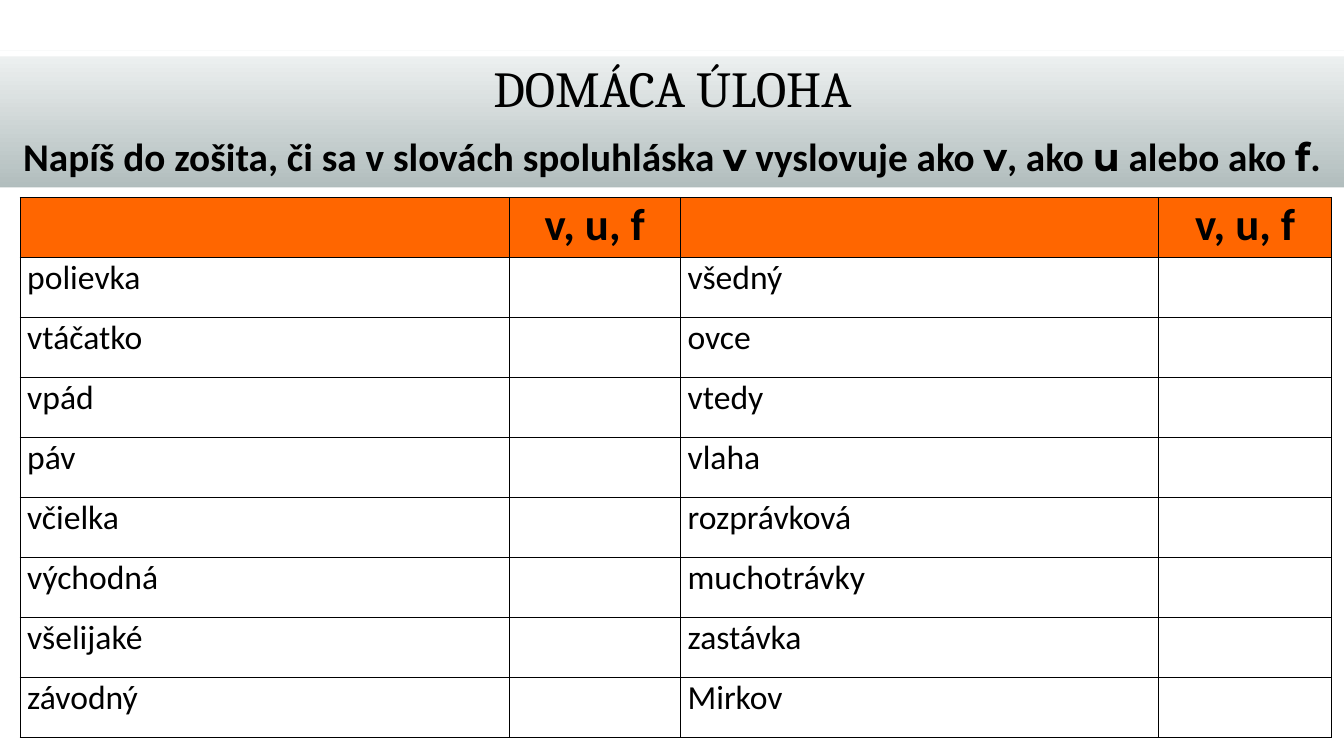
from lxml.etree import SubElement
from pptx import Presentation
from pptx.dml.color import RGBColor
from pptx.enum.shapes import MSO_SHAPE
from pptx.enum.text import MSO_ANCHOR, PP_ALIGN
from pptx.oxml.ns import qn
from pptx.util import Inches, Pt

BLACK = RGBColor(0x00, 0x00, 0x00)
WHITE = RGBColor(0xFF, 0xFF, 0xFF)
ORANGE = RGBColor(0xFF, 0x66, 0x00)
BAND_TOP = RGBColor(0xEF, 0xF2, 0xF2)
BAND_BOTTOM = RGBColor(0xB0, 0xBC, 0xBC)

# Content
TITLE = "DOMÁCA ÚLOHA"
TASK = [
    ("Napíš do zošita, či sa v slovách spoluhláska ", "Calibri"),
    ("v", "Montserrat"),
    (" vyslovuje ako ", "Calibri"),
    ("v", "Montserrat"),
    (", ako ", "Calibri"),
    ("u", "Montserrat"),
    (" alebo ako ", "Calibri"),
    ("f", "Montserrat"),
    (".", "Calibri"),
]
HEADER = ("", "v, u, f", "", "v, u, f")
WORD_PAIRS = [
    ("polievka", "všedný"),
    ("vtáčatko", "ovce"),
    ("vpád", "vtedy"),
    ("páv", "vlaha"),
    ("včielka", "rozprávková"),
    ("východná", "muchotrávky"),
    ("všelijaké", "zastávka"),
    ("závodný", "Mirkov"),
]
COLUMN_WIDTHS = (4.85, 1.7, 4.74, 1.72)
TABLE_HEIGHT = 5.36
SLIDE_WIDTH = 13.33


def add_strip(slide, top, height):
    """Add a full-width rectangle without outline."""
    shape = slide.shapes.add_shape(
        MSO_SHAPE.RECTANGLE, 0, Inches(top), Inches(SLIDE_WIDTH), Inches(height))
    shape.shadow.inherit = False
    shape.line.fill.background()
    return shape


def set_borders(cell):
    """Draw a thin black line on every side of a cell, ahead of its fill."""
    properties = cell._tc.get_or_add_tcPr()
    for position, side in enumerate(("lnL", "lnR", "lnT", "lnB")):
        line = SubElement(properties, qn(f"a:{side}"), w=str(Pt(1)))
        fill = SubElement(line, qn("a:solidFill"))
        SubElement(fill, qn("a:srgbClr"), val=str(BLACK))
        properties.insert(position, line)


def main():
    presentation = Presentation()
    presentation.slide_width = Inches(SLIDE_WIDTH)
    presentation.slide_height = Inches(7.5)
    slide = presentation.slides.add_slide(presentation.slide_layouts[5])

    # Gradient band with white edges
    band = add_strip(slide, 0.5, 1.39)
    band.fill.gradient()
    band.fill.gradient_angle = 270
    for stop, color in zip(band.fill.gradient_stops, (BAND_TOP, BAND_BOTTOM)):
        stop.color.rgb = color
    for top in (1.86, 0.5):
        edge = add_strip(slide, top, 0.06)
        edge.fill.solid()
        edge.fill.fore_color.rgb = WHITE

    # Title, brought in front of the band
    title = slide.shapes.title
    edge._element.addnext(title._element)
    title.left, title.top = Inches(1.17), Inches(0.52)
    title.width, title.height = Inches(11), Inches(1.22)
    title.text_frame.text = TITLE
    title.text_frame.vertical_anchor = MSO_ANCHOR.TOP
    title.text_frame.margin_top = Inches(0.11)
    paragraph = title.text_frame.paragraphs[0]
    paragraph.alignment = PP_ALIGN.CENTER
    paragraph.line_spacing = 0.9
    paragraph.font.name = "Cambria"
    paragraph.font.size = Pt(36)
    paragraph.font.color.rgb = BLACK

    # Task sentence
    task = slide.shapes.add_textbox(0, Inches(1.26), Inches(SLIDE_WIDTH), Inches(0.57))
    task.text_frame.word_wrap = True
    task.text_frame.vertical_anchor = MSO_ANCHOR.MIDDLE
    paragraph = task.text_frame.paragraphs[0]
    paragraph.alignment = PP_ALIGN.CENTER
    paragraph.font.size = Pt(28)
    paragraph.font.bold = True
    paragraph.font.color.rgb = BLACK
    for text, font_name in TASK:
        run = paragraph.add_run()
        run.text = text
        run.font.name = font_name

    # Word table
    rows = [HEADER] + [(left, "", right, "") for left, right in WORD_PAIRS]
    table = slide.shapes.add_table(
        len(rows), len(COLUMN_WIDTHS), Inches(0.2), Inches(1.96),
        Inches(sum(COLUMN_WIDTHS)), Inches(TABLE_HEIGHT)).table
    table.first_row = False
    table.horz_banding = False
    for column, width in zip(table.columns, COLUMN_WIDTHS):
        column.width = Inches(width)
    for row_index, words in enumerate(rows):
        is_header = row_index == 0
        table.rows[row_index].height = Inches(TABLE_HEIGHT / len(rows))
        for column_index, word in enumerate(words):
            cell = table.cell(row_index, column_index)
            cell.margin_left = cell.margin_right = Inches(0.07)
            cell.margin_top = cell.margin_bottom = 0
            if is_header:
                cell.fill.solid()
                cell.fill.fore_color.rgb = ORANGE
            else:
                cell.fill.background()
            set_borders(cell)
            cell.text = word
            paragraph = cell.text_frame.paragraphs[0]
            paragraph.alignment = PP_ALIGN.CENTER if is_header else PP_ALIGN.LEFT
            paragraph.font.name = "Calibri"
            paragraph.font.size = Pt(32 if is_header else 24)
            paragraph.font.bold = is_header
            paragraph.font.color.rgb = BLACK

    presentation.save("out.pptx")


if __name__ == "__main__":
    main()
